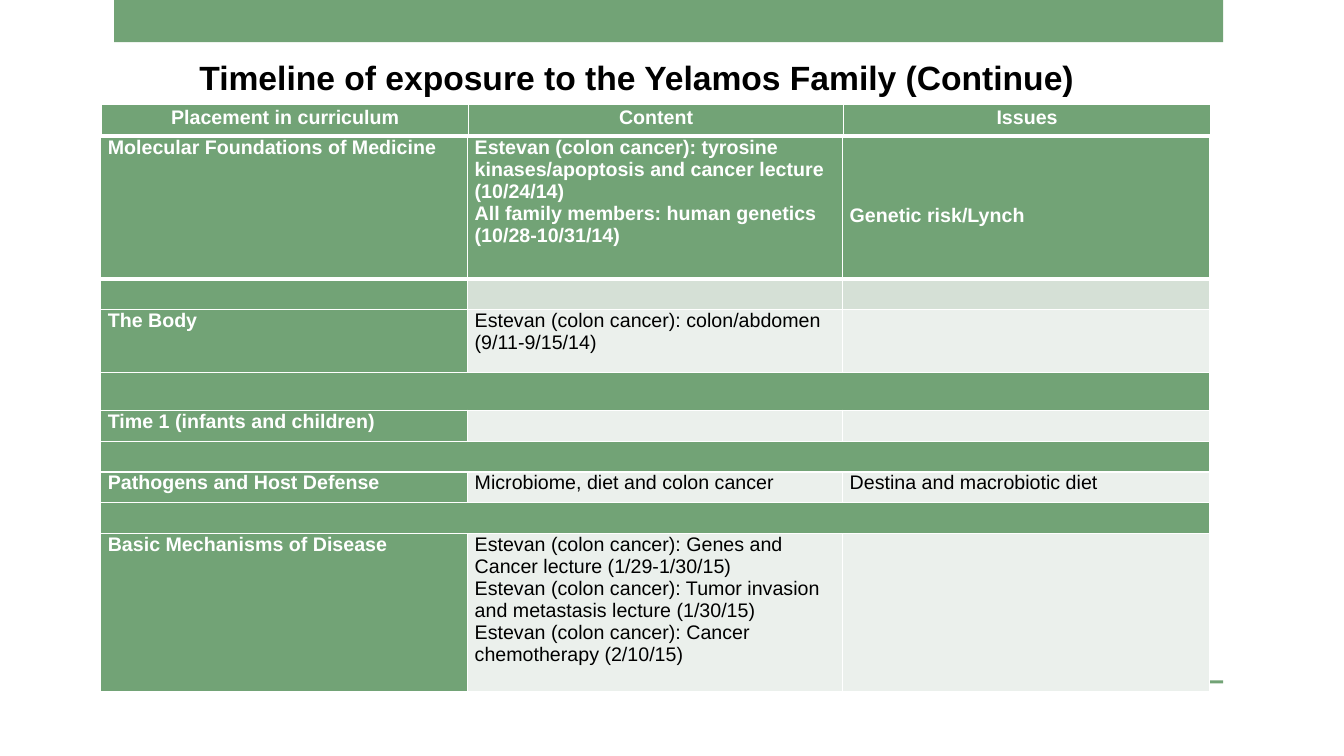
import pptx
import pptx.dml.color
import pptx.enum.shapes
import pptx.enum.text
import pptx.util
from lxml import etree

COLOURS = {"green": "72A376", "sage": "D5E0D6", "mist": "EBF0EC",
           "white": "FFFFFF", "black": "000000"}
ALIGN = pptx.enum.text.PP_ALIGN
NS = "http://schemas.openxmlformats.org/drawingml/2006/main"


def rgb(name):
    return pptx.dml.color.RGBColor.from_string(COLOURS[name])


def write(frame, text, size=14, colour="black", bold=False,
          align=ALIGN.LEFT, spacing=None):
    """Fill a text frame, one paragraph per line of text."""
    for number, line in enumerate(text.split("\n")):
        paragraph = frame.add_paragraph() if number else frame.paragraphs[0]
        paragraph.alignment = align
        paragraph.line_spacing = spacing
        run = paragraph.add_run()
        run.text = line
        run.font.name = "Arial"
        run.font.size = pptx.util.Pt(size)
        run.font.bold = bold
        run.font.color.rgb = rgb(colour)


class Deck:
    """Slide with a grid of 40 columns by 24 rows."""

    def __init__(self):
        self.prs = pptx.Presentation()
        self.prs.slide_width = pptx.util.Inches(13.33)
        self.prs.slide_height = pptx.util.Inches(7.5)
        self.slide = self.prs.slides.add_slide(self.prs.slide_layouts[5])

    def x(self, columns):
        return round(self.prs.slide_width * columns / 40)

    def y(self, rows):
        return round(self.prs.slide_height * rows / 24)

    def box(self, left, top, width, height):
        return self.x(left), self.y(top), self.x(width), self.y(height)

    def bar(self, *place):
        bar = self.slide.shapes.add_shape(
            pptx.enum.shapes.MSO_SHAPE.RECTANGLE, *self.box(*place))
        bar.shadow.inherit = False
        bar.fill.solid()
        bar.fill.fore_color.rgb = rgb("green")
        bar.line.fill.background()

    def title(self, text, *place):
        title = self.slide.shapes.title
        title.left, title.top, title.width, title.height = self.box(*place)
        frame = title.text_frame
        frame.word_wrap = False
        frame.auto_size = pptx.enum.text.MSO_AUTO_SIZE.NONE
        frame.vertical_anchor = pptx.enum.text.MSO_ANCHOR.MIDDLE
        write(frame, text, size=24, bold=True, align=ALIGN.CENTER)

    def table(self, left, top, widths, heights):
        table = self.slide.shapes.add_table(
            len(heights), len(widths),
            *self.box(left, top, sum(widths), sum(heights))).table
        table.first_row = table.horz_banding = False
        for column, width in zip(table.columns, widths):
            column.width = self.x(width)
        for row, height in zip(table.rows, heights):
            row.height = self.y(height)
        return table

    def cell(self, cell, text, fill, top_line=1, bottom_line=1,
             margin=0.07, drop=0, **style):
        cell.margin_left = cell.margin_right = pptx.util.Inches(margin)
        cell.margin_top = pptx.util.Pt(drop)
        cell.margin_bottom = 0
        # White cell borders
        properties = cell._tc.get_or_add_tcPr()
        for side, points in zip("LRTB", (1, 1, top_line, bottom_line)):
            line = etree.SubElement(properties, f"{{{NS}}}ln{side}",
                                    w=str(pptx.util.Pt(points)))
            paint = etree.SubElement(line, f"{{{NS}}}solidFill")
            etree.SubElement(paint, f"{{{NS}}}srgbClr", val=COLOURS["white"])
        cell.fill.solid()
        cell.fill.fore_color.rgb = rgb(fill)
        if text:
            write(cell.text_frame, text, **style)


HEADINGS = ["Placement in curriculum", "Content", "Issues"]
COLUMNS = [10.92, 11.16, 10.92]
SPACER = None  # a green band across all columns

# Height in grid rows, fill of the content cells, texts
CURRICULUM = [
    (4.5, "green", ["Molecular Foundations of Medicine",
                    "Estevan (colon cancer): tyrosine kinases/apoptosis and "
                    "cancer lecture (10/24/14)\nAll family members: human "
                    "genetics (10/28-10/31/14)", "Genetic risk/Lynch"]),
    (0.98, "sage", ["", "", ""]),
    (2, "mist", ["The Body",
                 "Estevan (colon cancer): colon/abdomen (9/11-9/15/14)", ""]),
    (1.2, "green", SPACER),
    (0.98, "mist", ["Time 1 (infants and children)", "", ""]),
    (0.98, "green", SPACER),
    (0.98, "mist", ["Pathogens and Host Defense",
                    "Microbiome, diet and colon cancer",
                    "Destina and macrobiotic diet"]),
    (0.98, "green", SPACER),
    (5, "mist", ["Basic Mechanisms of Disease",
                 "Estevan (colon cancer): Genes and Cancer lecture "
                 "(1/29-1/30/15)\nEstevan (colon cancer): Tumor invasion and "
                 "metastasis lecture (1/30/15)\nEstevan (colon cancer): "
                 "Cancer chemotherapy (2/10/15)", ""]),
]


def main():
    deck = Deck()

    # Top band and footer rule
    deck.bar(3.4, 0, 33, 1.34)
    deck.bar(3.4, 21.6, 33, 0.1)

    deck.title("Timeline of exposure to the Yelamos Family (Continue)",
               5.52, 1.64, 26.86, 1.6)

    # Curriculum table
    curriculum = deck.table(3, 4.35, COLUMNS, [row[0] for row in CURRICULUM])
    for r, (_, fill, texts) in enumerate(CURRICULUM):
        if texts is SPACER:
            curriculum.cell(r, 0).merge(curriculum.cell(r, 2))
        for c, text in enumerate(texts or ["", "", ""]):
            on_green = c == 0 or fill == "green"
            deck.cell(curriculum.cell(r, c), text,
                      "green" if on_green else fill,
                      top_line=3 if r == 1 else 1,
                      bottom_line=3 if r == 0 else 1,
                      drop=48 if (r, c) == (0, 2) else 0,
                      colour="white" if on_green else "black", bold=on_green)

    # Column headings
    headings = deck.table(3.03, 3.33, COLUMNS, [0.98])
    for c, heading in enumerate(HEADINGS):
        deck.cell(headings.cell(0, c), heading, "green", bottom_line=3,
                  margin=0.06, colour="white", bold=True,
                  align=ALIGN.CENTER, spacing=1.07)

    deck.prs.save("out.pptx")


if __name__ == "__main__":
    main()
